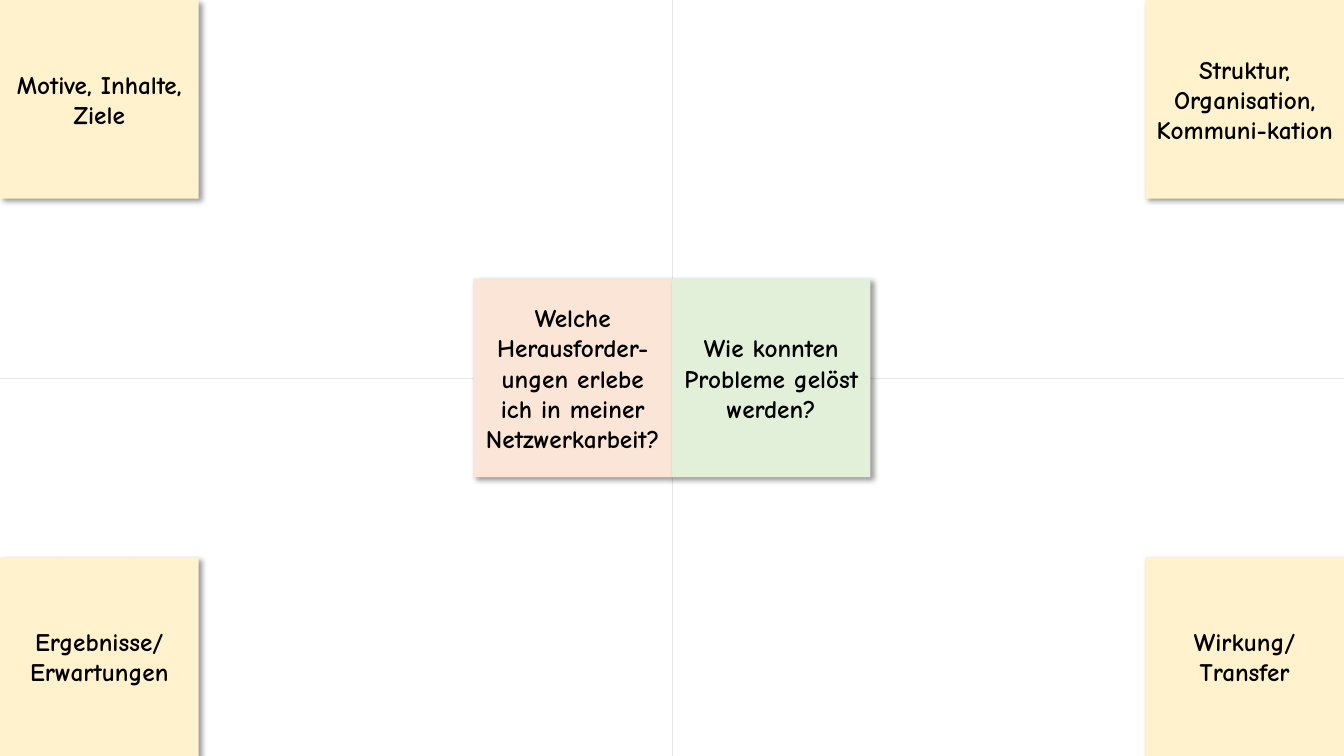
from lxml import etree
from pptx import Presentation
from pptx.dml.color import RGBColor
from pptx.enum.shapes import MSO_CONNECTOR, MSO_SHAPE
from pptx.enum.text import MSO_ANCHOR, PP_ALIGN
from pptx.oxml import parse_xml
from pptx.oxml.ns import nsdecls, qn
from pptx.util import Pt

RECTANGLE = MSO_SHAPE.RECTANGLE
STRAIGHT = MSO_CONNECTOR.STRAIGHT
MIDDLE = MSO_ANCHOR.MIDDLE
CENTER = PP_ALIGN.CENTER

YELLOW = RGBColor(0xFF, 0xF2, 0xCC)
ORANGE = RGBColor(0xFB, 0xE5, 0xD6)
GREEN = RGBColor(0xE2, 0xF0, 0xD9)
GRAY = RGBColor(0xE7, 0xE6, 0xE6)
BLACK = RGBColor(0, 0, 0)

WIDTH, HEIGHT = 960, 540
NOTE = 141.84
FONT = "Comic Neue"
SHADOW = (
    f'<a:effectLst {nsdecls("a")}>'
    '<a:outerShdw blurRad="50800" dist="38100" dir="2700000" algn="tl" rotWithShape="0">'
    '<a:srgbClr val="000000"><a:alpha val="40000"/></a:srgbClr>'
    '</a:outerShdw></a:effectLst>'
)


def add_note(slide, left, top, lines, color):
    shape = slide.shapes.add_shape(RECTANGLE, Pt(left), Pt(top), Pt(NOTE), Pt(NOTE))
    shape.fill.solid()
    shape.fill.fore_color.rgb = color
    shape.line.fill.background()
    shape._element.spPr.append(parse_xml(SHADOW))
    frame = shape.text_frame
    frame.word_wrap = True
    frame.vertical_anchor = MIDDLE
    paragraph = frame.paragraphs[0]
    paragraph.alignment = CENTER
    for index, line in enumerate(lines):
        if index:
            paragraph.add_line_break()
        run = paragraph.add_run()
        run.text = line
        run.font.name = FONT
        run.font.size = Pt(18)
        run.font.bold = True
        run.font.color.rgb = BLACK


def add_axis(slide, start_x, start_y, end_x, end_y):
    connector = slide.shapes.add_connector(
        STRAIGHT, Pt(start_x), Pt(start_y), Pt(end_x), Pt(end_y))
    connector.line.color.rgb = GRAY
    connector.line.width = Pt(0.5)
    etree.SubElement(connector._element.spPr, qn("a:effectLst"))


def add_corner_notes(slide, left, top, width, height):
    right = left + width - NOTE
    bottom = top + height - NOTE
    add_note(slide, left, top, ["Motive, Inhalte, Ziele"], YELLOW)
    add_note(slide, right, top, ["Struktur, Organisation, Kommuni-kation"], YELLOW)
    add_note(slide, left, bottom, ["Ergebnisse/", "Erwartungen"], YELLOW)
    add_note(slide, right, bottom, ["Wirkung/", "Transfer"], YELLOW)


def add_axes(slide, left, top, width, height):
    center_x = left + width / 2
    center_y = top + height / 2
    add_axis(slide, left, center_y, left + width, center_y)
    add_axis(slide, center_x, top + height, center_x, top)


def add_center_notes(slide, left, top, width, height):
    center_x = left + width / 2
    note_top = top + (height - NOTE) / 2
    add_note(slide, center_x - NOTE, note_top,
             ["Welche Herausforder-ungen erlebe ich in meiner Netzwerkarbeit?"], ORANGE)
    add_note(slide, center_x, note_top, ["Wie konnten Probleme gelöst werden?"], GREEN)


def main():
    presentation = Presentation()
    presentation.slide_width = Pt(WIDTH)
    presentation.slide_height = Pt(HEIGHT)
    slide = presentation.slides.add_slide(presentation.slide_layouts[6])
    for add_region in (add_corner_notes, add_axes, add_center_notes):
        add_region(slide, 0, 0, WIDTH, HEIGHT)
    presentation.save("out.pptx")


if __name__ == "__main__":
    main()
